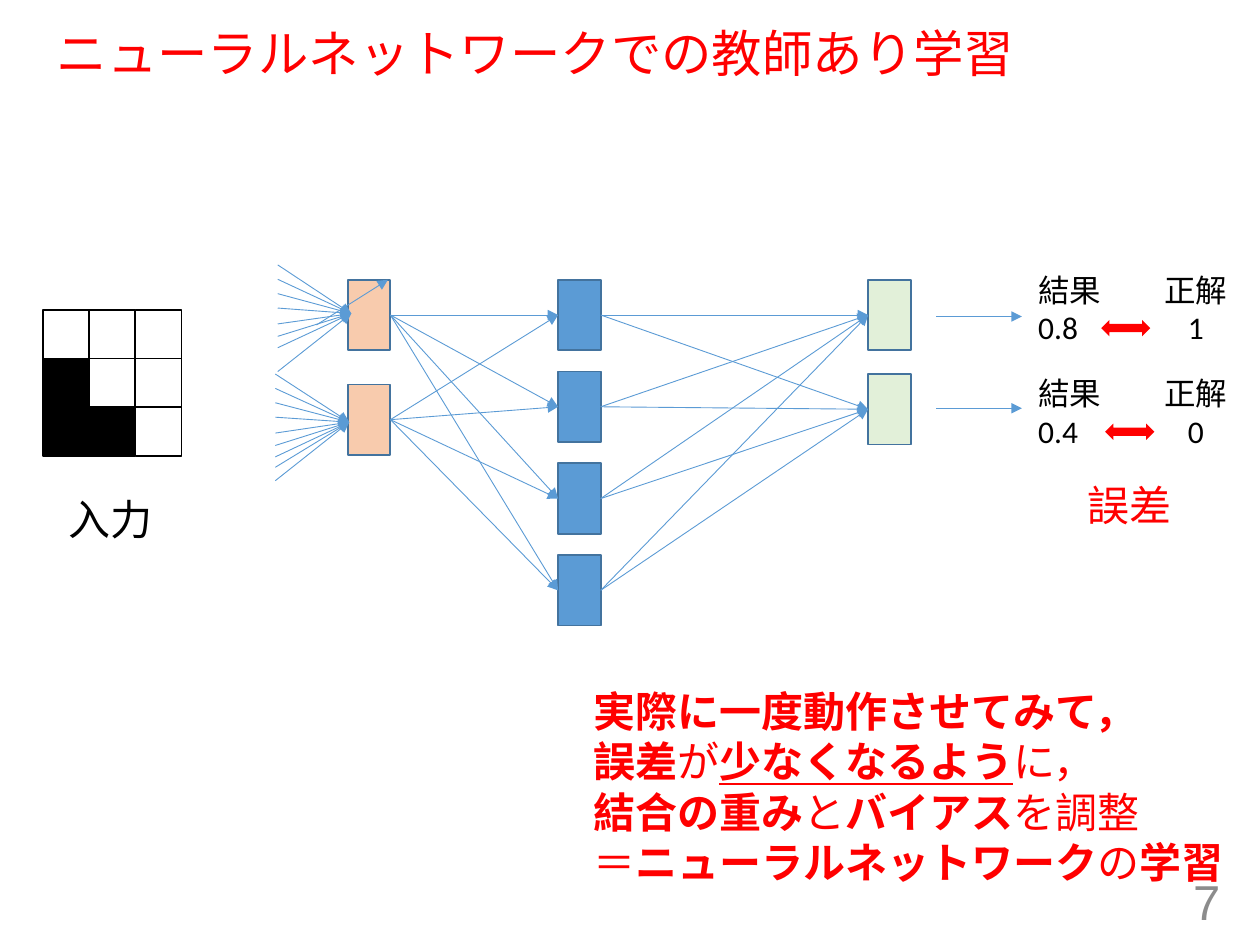
from itertools import product

from lxml.etree import SubElement
from pptx import Presentation
from pptx.dml.color import RGBColor
from pptx.enum.shapes import MSO_CONNECTOR, MSO_SHAPE
from pptx.enum.text import MSO_ANCHOR, PP_ALIGN
from pptx.oxml.ns import qn
from pptx.util import Cm, Pt

RED, BLACK, GREY = "FF0000", "000000", "8C8C8C"
BLUE, EDGE, PEACH, GREEN = "5B9BD5", "43739E", "F8CBAD", "E2F0D9"


def color(code):
    return RGBColor.from_string(code)


def write(para, text, font="Calibri", size=24, fill=BLACK, bold=False, under=False):
    run = para.add_run()
    run.text = text
    style = run.font
    style.name, style.size = font, Pt(size)
    style.bold, style.underline = bold, under
    style.color.rgb = color(fill)


def set_tab(para, pos):
    """Add a centred tab stop."""
    tabs = SubElement(para._p.get_or_add_pPr(), qn("a:tabLst"))
    SubElement(tabs, qn("a:tab"), pos=str(Cm(pos)), algn="ctr")


class Board:
    """Holds the slide and the look of its parts."""
    node_w, node_h = 0.86, 1.42

    def __init__(self, deck):
        self.slide = deck.slides.add_slide(deck.slide_layouts[5])
        self.shapes = self.slide.shapes

    def title(self, text, x, y, w, h):
        box = self.shapes.title
        box.left, box.top, box.width, box.height = Cm(x), Cm(y), Cm(w), Cm(h)
        box.text_frame.vertical_anchor = MSO_ANCHOR.MIDDLE
        para = box.text_frame.paragraphs[0]
        para.alignment, para.line_spacing = PP_ALIGN.LEFT, 0.9
        write(para, text, font="Arial", size=28.8, fill=RED)

    def text(self, lines, x, y, w, h, tab=None, align=PP_ALIGN.LEFT, **look):
        """Each line is a string, or a list of (text, format) pairs."""
        frame = self.shapes.add_textbox(Cm(x), Cm(y), Cm(w), Cm(h)).text_frame
        frame.word_wrap = tab is not None
        for i, line in enumerate(lines):
            para = frame.add_paragraph() if i else frame.paragraphs[0]
            para.alignment = align
            if tab:
                set_tab(para, tab)
            parts = [(line, {})] if isinstance(line, str) else line
            for part, extra in parts:
                write(para, part, **{**look, **extra})
        return frame

    def shape(self, x, y, w, h, fill=None, line=None, kind=MSO_SHAPE.RECTANGLE):
        item = self.shapes.add_shape(kind, Cm(x), Cm(y), Cm(w), Cm(h))
        item.shadow.inherit = False
        if fill:
            item.fill.solid()
            item.fill.fore_color.rgb = color(fill)
        else:
            item.fill.background()
        if line:
            item.line.color.rgb = color(line)
            item.line.width = Pt(1)
        else:
            item.line.fill.background()
        return item

    def layer(self, x, tops, fill):
        return [self.shape(x, y, self.node_w, self.node_h, fill, EDGE) for y in tops]

    def arrow(self, x1=0, y1=0, x2=0, y2=0):
        link = self.shapes.add_connector(
            MSO_CONNECTOR.STRAIGHT, Cm(x1), Cm(y1), Cm(x2), Cm(y2))
        link.line.color.rgb = color(BLUE)
        link.line.width = Pt(0.5)
        SubElement(link.line._get_or_add_ln(), qn("a:tailEnd"), type="triangle")
        SubElement(link._element.spPr, qn("a:effectLst"))
        return link

    def join(self, left, right):
        """Link every node of one layer to every node of the next."""
        for a, b in product(left, right):
            link = self.arrow()
            link.begin_connect(a, 3)
            link.end_connect(b, 1)

    def fan(self, x, y, steps, tip):
        for step in steps:
            self.arrow(x, y + step, *tip)


def main():
    deck = Presentation()
    deck.slide_width, deck.slide_height = Cm(25.4), Cm(19.05)
    board = Board(deck)
    board.title("ニューラルネットワークでの教師あり学習", 0.89, 0.48, 23.5, 1.3)
    page = board.text(["7"], 19.13, 17.65, 5.72, 1.02, align=PP_ALIGN.RIGHT,
                      font="Arial", size=28, fill=GREY)
    page.vertical_anchor = MSO_ANCHOR.MIDDLE

    # Input pixels
    for row, cells in enumerate(["000", "100", "110"]):
        for col, cell in enumerate(cells):
            board.shape(0.87 + col * 0.93, 6.25 + row * 0.98, 0.93, 0.98,
                        BLACK if cell == "1" else None, BLACK)
    board.text(["入力"], 1.14, 9.83, 2.24, 1.27)

    # Network
    top = 5.64
    first = board.layer(7.01, [top, 7.75], PEACH)
    hidden = board.layer(11.25, [top + 1.85 * i for i in range(4)], BLUE)
    last = board.layer(17.5, [top, 7.54], GREEN)
    board.join(first, hidden)
    board.join(hidden, last)
    steps = [0, 0.29, 0.58, 0.87, 1.19, 1.44, 1.67, 1.88, 2.15]
    board.fan(5.6, 5.34, steps[:7] + steps[8:], (7.08, 6.32))
    board.arrow(6.38, 6.55, 7.82, 5.64)
    board.fan(5.55, 7.54, steps, (7.04, 8.51))

    # Results against answers
    rows = [(5.33, 6.38, 22.2, "0.8", "1"), (7.42, 8.23, 22.28, "0.4", "0")]
    for y, mid, x, got, want in rows:
        board.arrow(18.87, mid, 20.6, mid)
        board.text(["結果\t正解", f"{got}\t{want}"], 20.68, y, 4.5, 1.8,
                   tab=3.18, size=18)
        board.shape(x, y + 1.12, 0.99, 0.33, RED, kind=MSO_SHAPE.LEFT_RIGHT_ARROW)
    board.text(["誤差"], 21.67, 9.55, 2.24, 1.27, fill=RED)

    bold = {"bold": True}
    board.text([
        [("実際に一度動作させてみて，", bold)],
        [("誤差", bold), ("が", {}),
         ("少なくなるよう", {"bold": True, "under": True}), ("に，", {})],
        [("結合の重み", bold), ("と", {}), ("バイアス", bold), ("を調整", {})],
        [("＝", {}), ("ニューラルネットワーク", bold), ("の", {}), ("学習", bold)],
    ], 11.71, 13.69, 13.34, 4.37, fill=RED)
    deck.save("out.pptx")


if __name__ == "__main__":
    main()
